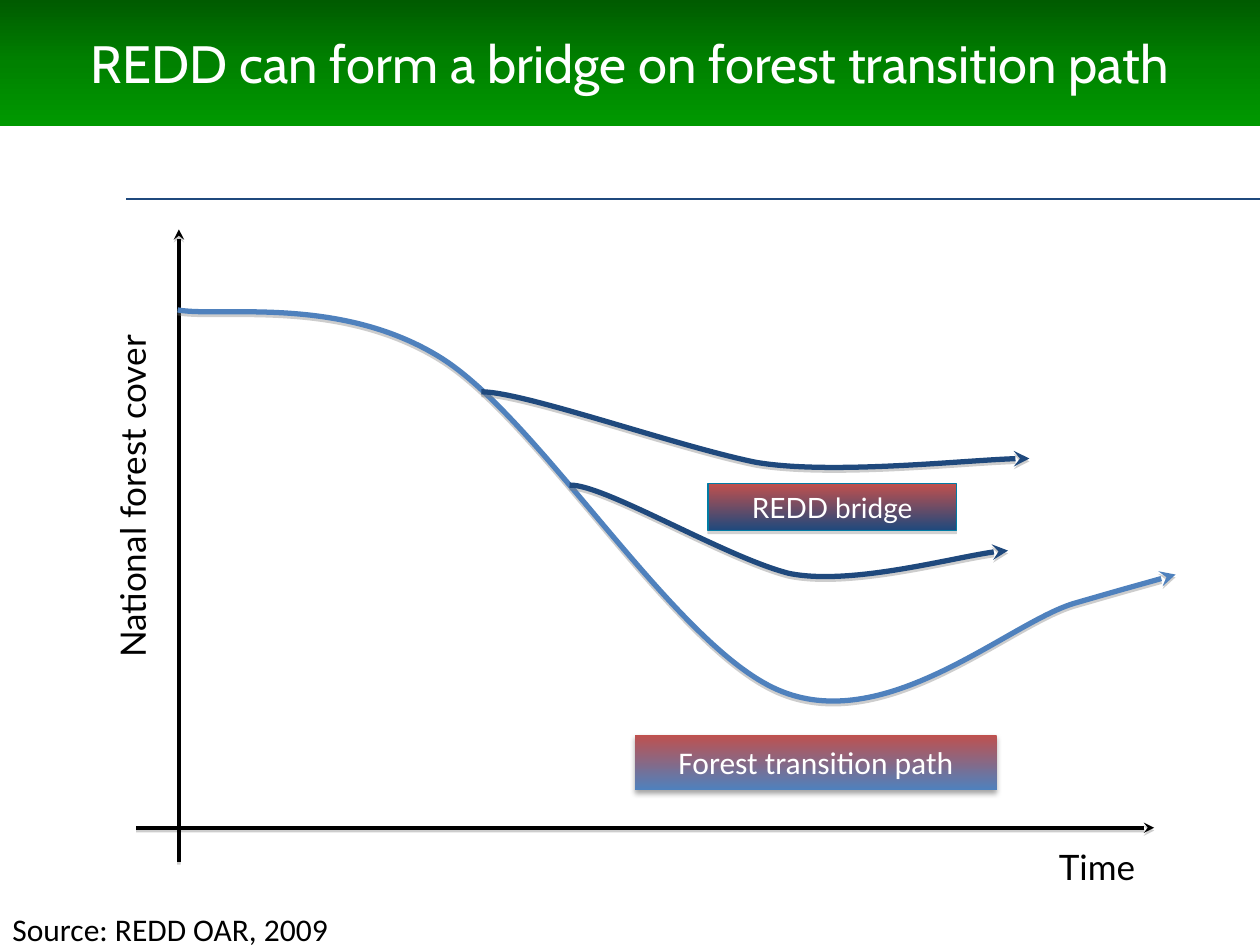
"""Build a slide on how REDD can bridge the forest transition path."""
from lxml.etree import SubElement
from pptx import Presentation
from pptx.dml.color import RGBColor
from pptx.enum.shapes import MSO_CONNECTOR, MSO_SHAPE
from pptx.enum.text import MSO_ANCHOR, PP_ALIGN
from pptx.oxml import parse_xml
from pptx.oxml.ns import nsdecls, qn
from pptx.util import Inches, Pt

NAVY, BLUE, RED = "1F497D", "4F81BD", "C0504D"
BLACK, WHITE = "000000", "FFFFFF"


def make_shadow(color, opacity, blur, distance, angle):
    return parse_xml(
        f'<a:effectLst {nsdecls("a")}><a:outerShdw blurRad="{Pt(blur)}" '
        f'dist="{Pt(distance)}" dir="{angle * 60000}" algn="ctr" rotWithShape="0">'
        f'<a:srgbClr val="{color}"><a:alpha val="{opacity * 1000}"/></a:srgbClr>'
        '</a:outerShdw></a:effectLst>')


def style_line(shape, color, width, arrow=None):
    shape.line.color.rgb = RGBColor.from_string(color)
    shape.line.width = Pt(width)
    properties = shape._element.spPr
    if arrow:
        line = properties.find(qn("a:ln"))
        SubElement(line, qn(arrow), type="stealth", w="med", len="med")
        properties.append(make_shadow("808080", 38, 0, 1.6, 90))
    else:
        SubElement(properties, qn("a:effectLst"))


presentation = Presentation()
presentation.slide_width = Inches(10)
presentation.slide_height = Inches(7.5)
slide = presentation.slides.add_slide(presentation.slide_layouts[6])

lines = [
    ((9.16, 6.57, 1, 6.57), BLACK, 2, "a:headEnd"),
    ((1, 1.58, 10, 1.58), NAVY, 0.75, None),
    ((1.42, 1.82, 1.42, 6.84), BLACK, 2, "a:headEnd"),
]
lines[0] = ((9.16, 6.57, 1.08, 6.57), *lines[0][1:])
for ends, color, width, arrow in lines:
    connector = slide.shapes.add_connector(
        MSO_CONNECTOR.STRAIGHT, *[Inches(value) for value in ends])
    style_line(connector, color, width, arrow)

curves = [
    (BLUE, [(1.41, 2.46), (1.75, 2.52), (2.7, 2.34), (3.5, 2.84),
            (4.3, 3.34), (5.38, 5.17), (6.21, 5.49),
            (7.05, 5.82), (8, 4.95), (8.52, 4.79),
            (9.04, 4.64), (8.87, 4.69), (9.33, 4.56)]),
    (NAVY, [(4.52, 3.85), (4.79, 3.84), (5.75, 4.42), (6.26, 4.55),
            (6.74, 4.65), (7.77, 4.37), (8, 4.37)]),
    (NAVY, [(3.82, 3.11), (4.16, 3.11), (5.36, 3.54), (6, 3.67),
            (6.59, 3.77), (7.88, 3.63), (8.17, 3.64)]),
]
for color, points in curves:
    start, *controls = [(Inches(x), Inches(y)) for x, y in points]
    builder = slide.shapes.build_freeform(*start)
    builder.add_line_segments(controls, close=False)
    curve = builder.convert_to_shape()
    outline = next(curve._element.iter(qn("a:path")))
    segments = outline.findall(qn("a:lnTo"))
    for index in range(0, len(segments), 3):
        bezier = SubElement(outline, qn("a:cubicBezTo"))
        for segment in segments[index:index + 3]:
            bezier.append(segment[0])
            outline.remove(segment)
    curve.fill.background()
    style_line(curve, color, 3, "a:tailEnd")

boxes = []
for bounds, colors, shadow in [
    ((0, 0, 10, 1), ("005B00", "008100", "009900"), None),
    ((5.04, 5.83, 2.87, 0.44), (RED, BLUE), (BLACK, 35, 3.1, 1.8, 90)),
    ((5.62, 3.84, 1.97, 0.37), (RED, NAVY), ("808080", 35, 0, 1.8, 90)),
]:
    box = slide.shapes.add_shape(
        MSO_SHAPE.RECTANGLE, *[Inches(value) for value in bounds])
    stops = "".join(
        f'<a:gs pos="{100000 * index // (len(colors) - 1)}"><a:srgbClr val="{color}"/></a:gs>'
        for index, color in enumerate(colors))
    box._element.spPr.find(qn("a:prstGeom")).addnext(parse_xml(
        f'<a:gradFill {nsdecls("a")} rotWithShape="1"><a:gsLst>{stops}</a:gsLst>'
        '<a:lin ang="5400000" scaled="0"/></a:gradFill>'))
    box.line.fill.background()
    if shadow:
        box._element.spPr.append(make_shadow(*shadow))
    else:
        box.shadow.inherit = False
    boxes.append(box)
title, path_box, bridge_box = boxes
bridge_box.line.color.rgb = RGBColor.from_string("007CA4")
bridge_box.line.width = Pt(0.75)

cover_label, time_label, source_label = [
    slide.shapes.add_textbox(*[Inches(value) for value in bounds])
    for bounds in [(-0.57, 3.99, 3.23, 0.41), (8.28, 6.67, 0.81, 0.38), (0, 7.17, 3.92, 0.4)]
]
cover_label.rotation = 270

for shape, text, size, font, color, alignment, margins in [
    (title, "REDD can form a bridge on forest transition path", 30, "Cabin", WHITE,
     PP_ALIGN.CENTER, (0.1, 0.05)),
    (path_box, "Forest transition path", 18, "Calibri", WHITE, PP_ALIGN.CENTER, (0, 0)),
    (bridge_box, "REDD bridge", 16, "Lato", WHITE, PP_ALIGN.CENTER, (0.1, 0.05)),
    (cover_label, "National forest cover", 20, "Lato", BLACK, PP_ALIGN.RIGHT, (0.08, 0.04)),
    (time_label, "Time", 20, "Lato", BLACK, PP_ALIGN.RIGHT, (0.08, 0.04)),
    (source_label, "Source: REDD OAR, 2009", 18, "Calibri", BLACK, PP_ALIGN.LEFT, (0.1, 0.05)),
]:
    frame = shape.text_frame
    frame.word_wrap = True
    frame.vertical_anchor = MSO_ANCHOR.MIDDLE if shape in boxes else MSO_ANCHOR.TOP
    frame.margin_left = frame.margin_right = Inches(margins[0])
    frame.margin_top = frame.margin_bottom = Inches(margins[1])
    paragraph = frame.paragraphs[0]
    paragraph.alignment = alignment
    run = paragraph.add_run()
    run.text = text
    run.font.size = Pt(size)
    run.font.name = font
    run.font.color.rgb = RGBColor.from_string(color)
    if shape is title:
        fill = run._r.get_or_add_rPr().find(qn("a:solidFill"))
        fill.addnext(make_shadow(BLACK, 43, 3, 3, 45))

presentation.save("out.pptx")
